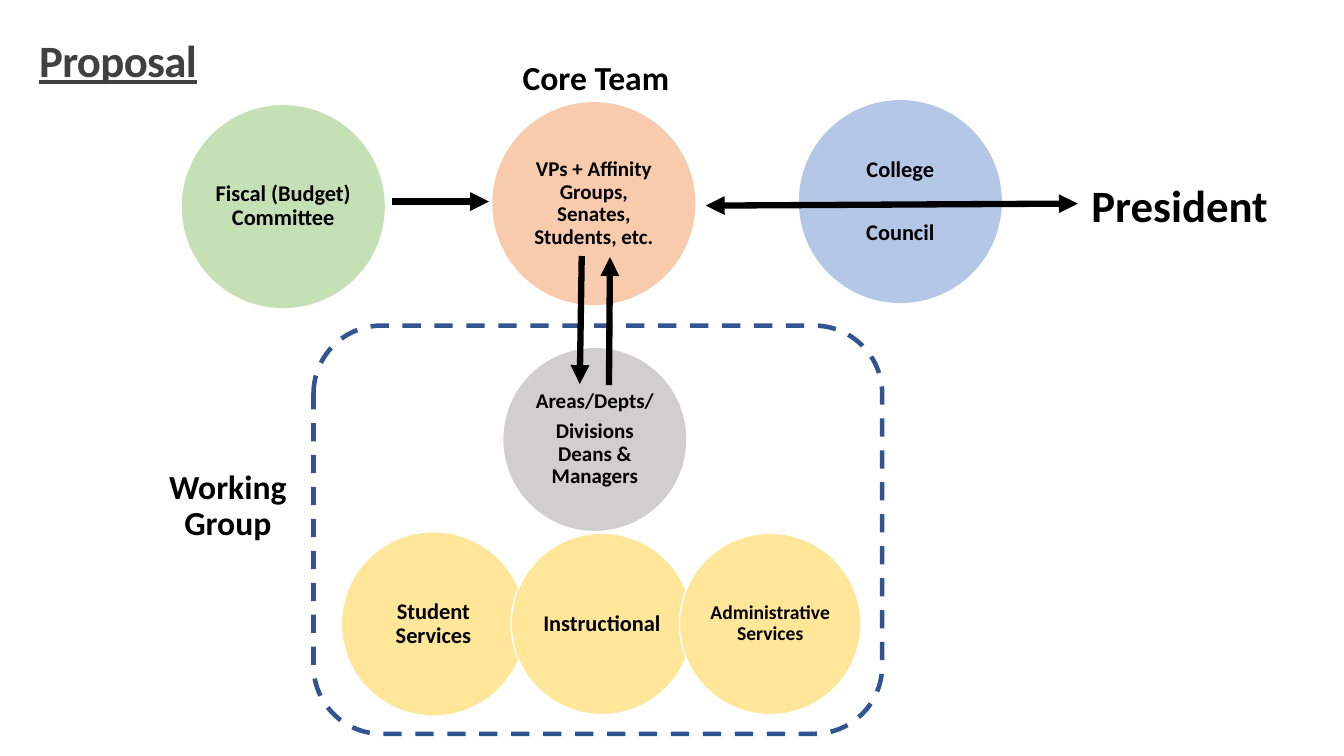
import pptx
import pptx.dml.color
import pptx.enum.dml
import pptx.enum.shapes
import pptx.enum.text
import pptx.oxml.ns
import pptx.util
from lxml import etree
from pptx.util import Inches

FONT = "Calibri"
BLACK = "000000"
YELLOW = "FFE699"
WHITE = "FFFFFF"


def color(value):
    return pptx.dml.color.RGBColor.from_string(value)


def set_line(line, value, width):
    line.color.rgb = color(value)
    line.width = pptx.util.Pt(width)


def write_text(shape, text, size=16, text_color=BLACK, align="CENTER", inset=0.02,
               line_spacing=0.9, gap=5, underline=False, tracking=None):
    """Write one paragraph per line of text, gap points apart, centred vertically."""
    frame = shape.text_frame
    frame.word_wrap = True
    frame.vertical_anchor = pptx.enum.text.MSO_ANCHOR.MIDDLE
    frame.margin_left = frame.margin_right = Inches(inset)
    frame.margin_top = frame.margin_bottom = Inches(inset)
    lines = text.split("\n")
    for index, content in enumerate(lines):
        paragraph = frame.add_paragraph() if index else frame.paragraphs[0]
        paragraph.alignment = getattr(pptx.enum.text.PP_ALIGN, align)
        paragraph.line_spacing = line_spacing
        paragraph.space_after = pptx.util.Pt(gap if index < len(lines) - 1 else 0)
        run = paragraph.add_run()
        run.text = content
        run.font.name = FONT
        run.font.size = pptx.util.Pt(size)
        run.font.bold = True
        run.font.underline = underline
        run.font.color.rgb = color(text_color)
        if tracking is not None:
            run.font._element.set("spc", str(int(tracking * 100)))


def add_label(slide, text, left, top, width, height, **text_format):
    box = slide.shapes.add_textbox(Inches(left), Inches(top), Inches(width), Inches(height))
    write_text(box, text, **text_format)


def add_circle(slide, text, left, top, diameter, fill, outline=None, **text_format):
    circle = slide.shapes.add_shape(
        pptx.enum.shapes.MSO_SHAPE.OVAL,
        Inches(left), Inches(top), Inches(diameter), Inches(diameter))
    circle.shadow.inherit = False
    circle.fill.solid()
    circle.fill.fore_color.rgb = color(fill)
    set_line(circle.line, outline or fill, 1)
    write_text(circle, text, **text_format)


def add_dashed_frame(slide, left, top, width, height):
    frame = slide.shapes.add_shape(
        pptx.enum.shapes.MSO_SHAPE.ROUNDED_RECTANGLE,
        Inches(left), Inches(top), Inches(width), Inches(height))
    frame.shadow.inherit = False
    frame.fill.background()
    set_line(frame.line, "325491", 3.25)
    frame.line.dash_style = pptx.enum.dml.MSO_LINE.DASH


def add_arrow(slide, start, end, both_ends=False):
    arrow = slide.shapes.add_connector(
        pptx.enum.shapes.MSO_CONNECTOR.STRAIGHT,
        *(Inches(length) for length in start + end))
    set_line(arrow.line, BLACK, 4.5)
    line = arrow.line._get_or_add_ln()
    for tag in ("a:headEnd", "a:tailEnd") if both_ends else ("a:tailEnd",):
        etree.SubElement(line, pptx.oxml.ns.qn(tag), type="triangle")
    etree.SubElement(arrow._element.spPr, pptx.oxml.ns.qn("a:effectLst"))


def main():
    presentation = pptx.Presentation()
    presentation.slide_width = Inches(13.33)
    presentation.slide_height = Inches(7.5)
    slide = presentation.slides.add_slide(presentation.slide_layouts[6])

    add_label(slide, "Proposal", 0.29, 0.15, 2.7, 0.97, size=32, text_color="404040",
              align="LEFT", inset=0.1, line_spacing=0.85, underline=True, tracking=-0.5)

    add_circle(slide, "Fiscal (Budget) Committee", 1.81, 1.05, 2, "C5E0B4")
    add_circle(slide, "College\nCouncil", 7.93, 1, 2, "B4C7E7", gap=28)
    add_circle(slide, "VPs + Affinity Groups, Senates, Students, etc.",
               4.89, 1.02, 2, "F8CBAD", size=15)
    add_circle(slide, "Areas/Depts/\nDivisions Deans & Managers",
               5, 3.46, 1.8, "D0CECE", size=15)

    services = (("Student Services", 16, YELLOW),
                ("Instructional", 16, WHITE),
                ("Administrative Services", 14, WHITE))
    for index, (name, size, outline) in enumerate(services):
        add_circle(slide, name, 3.4 + 1.67 * index, 5.29, 1.8, YELLOW, outline, size=size)

    add_dashed_frame(slide, 3.11, 3.23, 5.64, 4.05)

    add_label(slide, "Core Team", 4.24, 0.48, 3.34, 0.61, size=24, inset=0.19)
    add_label(slide, "President", 10.56, 1.61, 2.28, 0.91, size=32, inset=0.19)
    add_label(slide, "Working Group", 1.41, 4.47, 1.7, 1.11, size=24, inset=0.19)

    add_arrow(slide, (3.89, 2), (4.85, 2))
    add_arrow(slide, (10.69, 2.02), (7, 2.04), both_ends=True)
    add_arrow(slide, (5.77, 2.54), (5.75, 3.81))
    add_arrow(slide, (6.04, 3.82), (6.05, 2.55))

    presentation.save("out.pptx")


if __name__ == "__main__":
    main()
